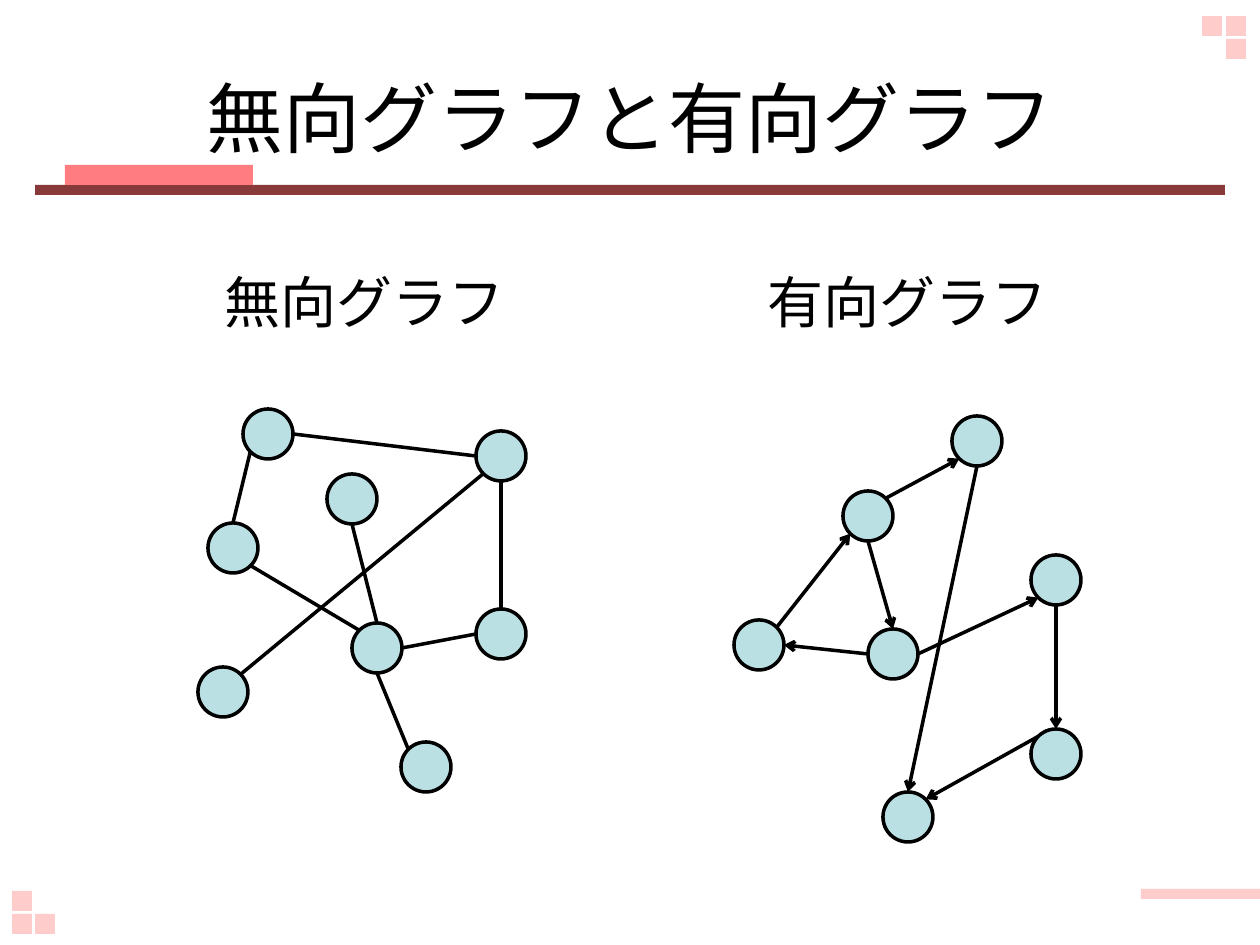
from math import cos, radians, sin

from lxml import etree
from pptx import Presentation
from pptx.dml.color import RGBColor
from pptx.enum.shapes import MSO_CONNECTOR, MSO_SHAPE
from pptx.enum.text import MSO_ANCHOR, PP_ALIGN
from pptx.oxml.ns import qn
from pptx.util import Pt

RECT, OVAL = MSO_SHAPE.RECTANGLE, MSO_SHAPE.OVAL
STRAIGHT = MSO_CONNECTOR.STRAIGHT
CENTER, MIDDLE, TOP = PP_ALIGN.CENTER, MSO_ANCHOR.MIDDLE, MSO_ANCHOR.TOP
SCALE = 914400 / 126
BLACK, BLUE, PINK = "000000", "BBE0E3", "FFCCCC"
# Connection sites of an oval, counterclockwise from the top
N, NW, W, SW, S, SE, E, NE = range(8)


def px(n):
    return round(n * SCALE)


def color(code):
    return RGBColor.from_string(code)


class Deck:
    font, size, width = "Arial", 50, 2

    def __init__(self):
        self.prs = Presentation()
        self.prs.slide_width, self.prs.slide_height = px(1260), px(945)
        self.slide = self.prs.slides.add_slide(self.prs.slide_layouts[5])
        self.shapes = self.slide.shapes

    def shape(self, kind, x, y, w, h, fill):
        item = self.shapes.add_shape(kind, px(x), px(y), px(w), px(h))
        item.shadow.inherit = False
        item.fill.solid()
        item.fill.fore_color.rgb = color(fill)
        item.line.fill.background()
        return item

    def stroke(self, item):
        item.line.width = Pt(self.width)
        item.line.color.rgb = color(BLACK)

    def node(self, x, y):
        """Draw a graph node centred on x, y."""
        half = self.size / 2
        item = self.shape(OVAL, x - half, y - half, self.size, self.size, BLUE)
        self.stroke(item)
        return item

    def spot(self, node, site):
        """Return the point of a connection site on a node's rim."""
        turn, half = radians(90 + 45 * site), node.width / 2
        return (round(node.left + half * (1 + cos(turn))),
                round(node.top + half * (1 - sin(turn))))

    def edge(self, start, out, end, into, arrow):
        """Join two nodes at the given sites, which python-pptx limits to four."""
        line = self.shapes.add_connector(
            STRAIGHT, *self.spot(start, out), *self.spot(end, into))
        self.stroke(line)
        glue = line._element.nvCxnSpPr.cNvCxnSpPr
        for tag, node, site in (("a:stCxn", start, out), ("a:endCxn", end, into)):
            etree.SubElement(glue, qn(tag), id=str(node.shape_id), idx=str(site))
        if arrow:
            etree.SubElement(line.line._ln, qn("a:tailEnd"), type="arrow")
        etree.SubElement(line._element.spPr, qn("a:effectLst"))

    def graph(self, spots, edges, arrow=False):
        nodes = {name: self.node(*spot) for name, spot in spots.items()}
        for start, out, end, into in edges:
            self.edge(nodes[start], out, nodes[end], into, arrow)

    def put_text(self, item, text, size, anchor):
        frame = item.text_frame
        frame.word_wrap, frame.vertical_anchor = True, anchor
        para = frame.paragraphs[0]
        para.alignment = CENTER
        run = para.add_run()
        run.text = text
        for key, value in {"name": self.font, "size": Pt(size)}.items():
            setattr(run.font, key, value)
        run.font.color.rgb = color(BLACK)

    def title(self, text, x, y, w, h):
        item = self.shapes.title
        box = {"left": x, "top": y, "width": w, "height": h}
        for key, value in box.items():
            setattr(item, key, px(value))
        self.put_text(item, text, 44, MIDDLE)
        self.shapes._spTree.append(item._element)

    def label(self, text, x, y, w, h):
        item = self.shapes.add_textbox(px(x), px(y), px(w), px(h))
        self.put_text(item, text, 32, TOP)


def main():
    deck = Deck()
    bars = [(35, 185, 1190, 10, "883A3A"), (65, 165, 188, 20, "FF7C80"),
            (1141, 889, 119, 10, PINK)]
    for bar in bars:
        deck.shape(RECT, *bar)
    tiles = [(1226, 16), (1202, 16), (1226, 39), (12, 914), (35, 914), (12, 891)]
    for x, y in tiles:
        deck.shape(RECT, x, y, 20, 20, PINK)

    deck.title("無向グラフと有向グラフ", 63, 38, 1134, 158)

    deck.graph(
        {"a": (268, 434), "b": (233, 548), "c": (352, 499), "d": (377, 648),
         "e": (501, 456), "f": (223, 692), "g": (426, 767), "h": (501, 634)},
        [("a", SW, "b", N), ("a", E, "e", W), ("e", S, "h", N),
         ("d", E, "h", W), ("f", NE, "e", SW), ("c", S, "d", N),
         ("b", SE, "d", NW), ("d", S, "g", NW)])
    deck.graph(
        {"a": (868, 516), "b": (893, 654), "c": (1056, 580), "d": (977, 441),
         "e": (759, 645), "f": (908, 817), "g": (1056, 754)},
        [("a", NE, "d", SW), ("e", NE, "a", SW), ("a", S, "b", N),
         ("b", W, "e", E), ("b", E, "c", SW), ("c", S, "g", N),
         ("g", NW, "f", NE), ("d", S, "f", N)],
        arrow=True)

    deck.label("無向グラフ", 149, 261, 432, 81)
    deck.label("有向グラフ", 699, 261, 418, 81)
    deck.prs.save("out.pptx")


if __name__ == "__main__":
    main()
